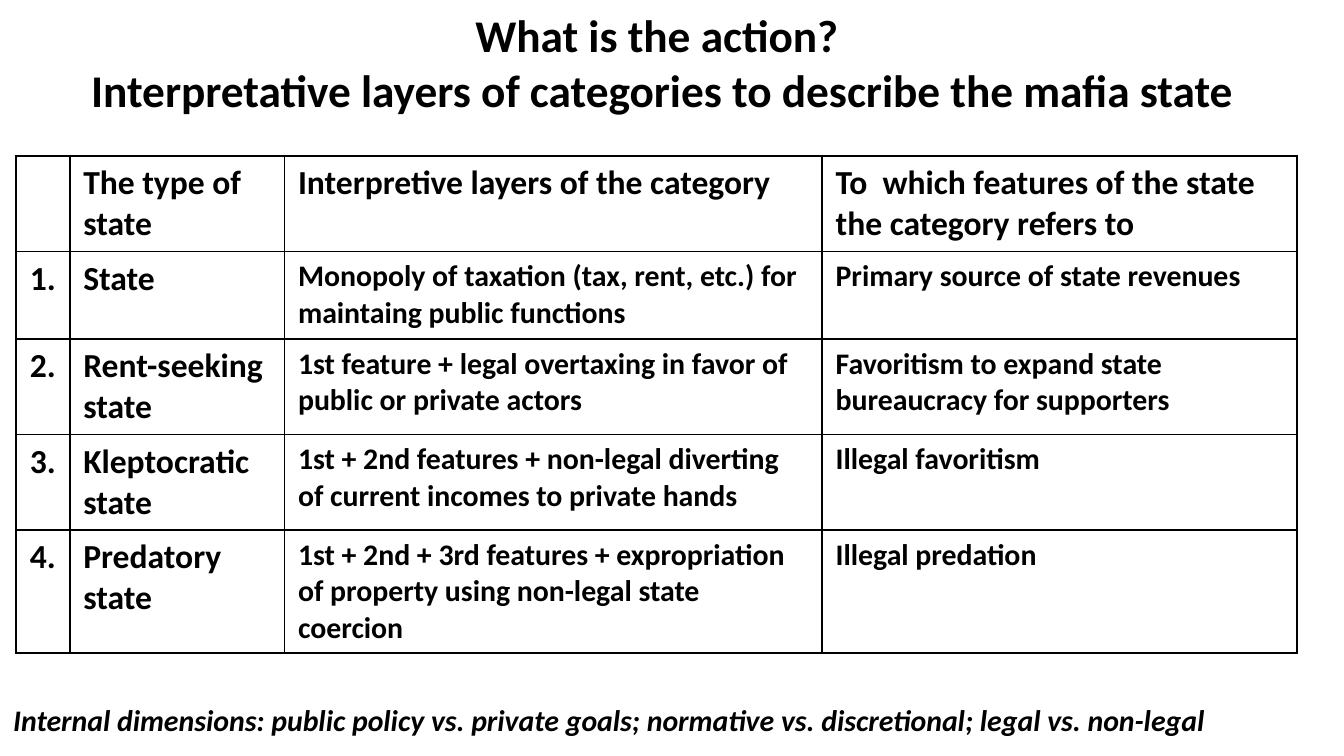
from lxml.etree import SubElement
from pptx import Presentation
from pptx.dml.color import RGBColor
from pptx.enum.text import MSO_ANCHOR, MSO_AUTO_SIZE, PP_ALIGN
from pptx.oxml.ns import qn
from pptx.util import Cm, Pt

COLORS = {"ink": "000000", "paper": "FFFFFF"}
FONT = "Calibri"
HEAD, BODY = 18, 16

TITLE = ["What is the action? ",
         "Interpretative layers of categories to describe the mafia state"]
NOTE = ("Internal dimensions: public policy vs. private goals; "
        "normative vs. discretional; legal vs. non-legal")
TOP = ["", "The type of state", "Interpretive layers of the category",
       "To  which features of the state the category refers to"]
STATES = [
    ("State",
     "Monopoly of taxation (tax, rent, etc.) for maintaing public functions",
     "Primary source of state revenues"),
    ("Rent-seeking state",
     "1st feature + legal overtaxing in favor of public or private actors",
     "Favoritism to expand state bureaucracy for supporters"),
    ("Kleptocratic state",
     "1st + 2nd features + non-legal diverting of current incomes to private hands",
     "Illegal favoritism"),
    ("Predatory state",
     "1st + 2nd + 3rd features + expropriation of property using non-legal state coercion",
     "Illegal predation"),
]
WIDTHS = [1.02, 4.06, 10.16, 8.97]
HEIGHTS = [1.8, 1.65, 1.8, 1.8, 2.33]


class Deck:
    def __init__(self, wide, high):
        self.prs = Presentation()
        self.prs.slide_width, self.prs.slide_height = Cm(wide), Cm(high)
        self.slide = self.prs.slides.add_slide(self.prs.slide_layouts[5])
        fill = self.slide.background.fill
        fill.solid()
        fill.fore_color.rgb = RGBColor.from_string(COLORS["paper"])

    def run(self, para, text, size, italic=False):
        run = para.add_run()
        run.text = text
        font = run.font
        font.name, font.size = FONT, Pt(size)
        font.bold, font.italic = True, italic
        font.color.rgb = RGBColor.from_string(COLORS["ink"])

    def title(self, lines, left, top, wide, high, size):
        box = self.slide.shapes.title
        box.left, box.top, box.width, box.height = map(Cm, (left, top, wide, high))
        frame = box.text_frame
        frame.auto_size = MSO_AUTO_SIZE.NONE
        frame.vertical_anchor = MSO_ANCHOR.MIDDLE
        para = frame.paragraphs[0]
        para.alignment = PP_ALIGN.CENTER
        for i, line in enumerate(lines):
            if i:
                para.add_line_break()
            self.run(para, line, size)

    def note(self, text, left, top, wide, high, size):
        box = self.slide.shapes.add_textbox(*map(Cm, (left, top, wide, high)))
        frame = box.text_frame
        frame.word_wrap = True
        frame.auto_size = MSO_AUTO_SIZE.SHAPE_TO_FIT_TEXT
        self.run(frame.paragraphs[0], text, size, italic=True)

    def border(self, cell):
        props = cell._tc.get_or_add_tcPr()
        for side in "LRTB":
            line = SubElement(props, qn(f"a:ln{side}"), w=str(Pt(1)))
            fill = SubElement(line, qn("a:solidFill"))
            SubElement(fill, qn("a:srgbClr"), val=COLORS["ink"])

    def table(self, rows, left, top, widths, heights):
        frame = self.slide.shapes.add_table(
            len(rows), len(widths), Cm(left), Cm(top),
            Cm(sum(widths)), Cm(sum(heights)))
        grid = frame.table
        grid.first_row = grid.horz_banding = False
        for col, wide in zip(grid.columns, widths):
            col.width = Cm(wide)
        for row, high in zip(grid.rows, heights):
            row.height = Cm(high)
        for r, texts in enumerate(rows):
            for c, text in enumerate(texts):
                cell = grid.cell(r, c)
                self.border(cell)
                cell.fill.background()
                para = cell.text_frame.paragraphs[0]
                para.alignment = PP_ALIGN.LEFT if c else PP_ALIGN.CENTER
                if text:
                    self.run(para, text, BODY if r and c > 1 else HEAD)
        # The middle heading is justified
        grid.cell(0, 2).text_frame.paragraphs[0].alignment = PP_ALIGN.JUSTIFY


def main():
    deck = Deck(25.4, 14.29)

    # Heading
    deck.title(TITLE, 0.89, 0, 23.24, 2.34, 24.3)

    # Numbered kinds of state
    rows = [TOP] + [(f"{n}.", *state) for n, state in enumerate(STATES, 1)]
    deck.table(rows, 0.3, 2.95, WIDTHS, HEIGHTS)

    # Closing line
    deck.note(NOTE, 0, 13.13, 25.4, 0.94, BODY)

    deck.prs.save("out.pptx")


if __name__ == "__main__":
    main()
